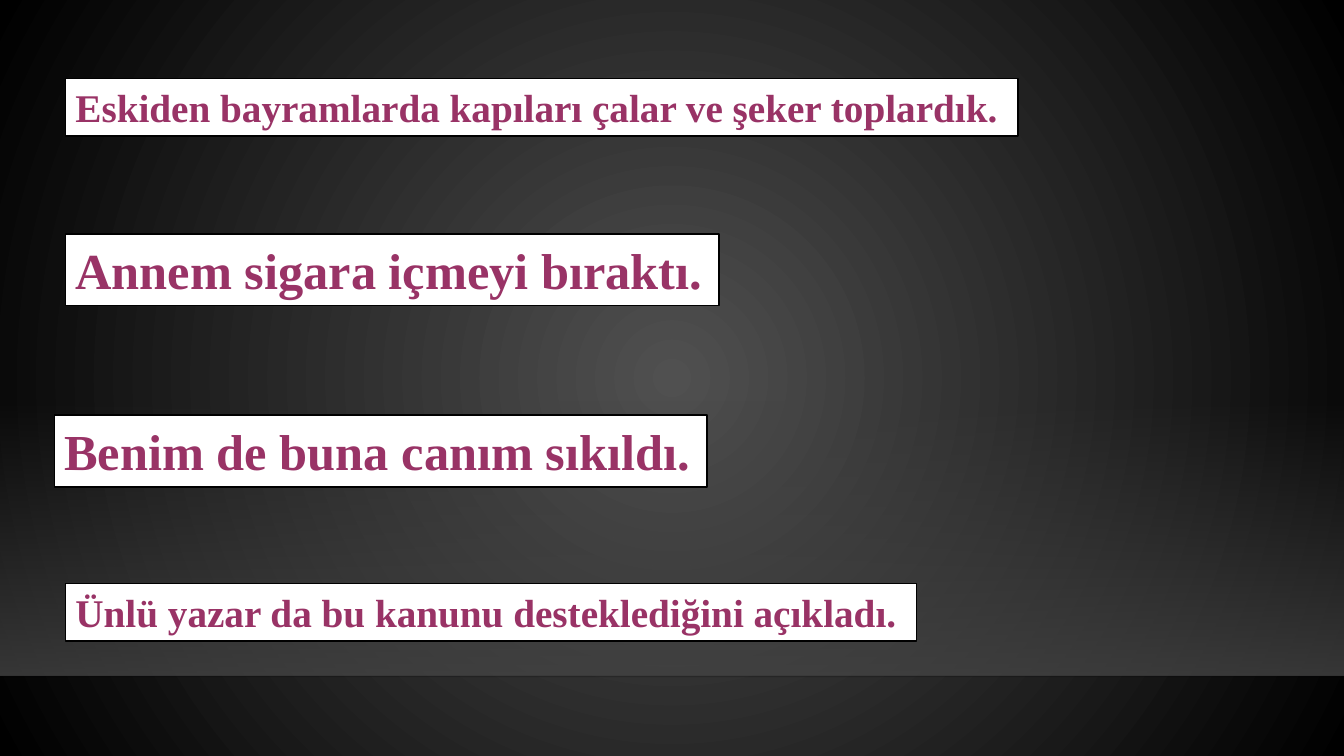
from pptx import Presentation, util as u
from pptx.dml import color
from pptx.enum import shapes, text
from pptx.oxml import parse_xml
from pptx.oxml.ns import nsdecls, qn

HUES = {"glow": "505050", "dark": "000000", "floor": "454545",
        "edge": "000001", "paper": "FFFFFF", "plum": "993366"}
FONT = {"name": "Times New Roman", "bold": True}
FRAME = {"word_wrap": False, "auto_size": text.MSO_AUTO_SIZE.SHAPE_TO_FIT_TEXT,
         "vertical_anchor": text.MSO_ANCHOR.TOP}
RADIAL = ('<a:path path="circle"><a:fillToRect l="50000" t="50000" '
          'r="50000" b="50000"/></a:path>')
DOWN = '<a:lin ang="5400000" scaled="0"/>'

# Sentence, left, top, width, height, text size
LINES = [
    ("Eskiden bayramlarda kapıları çalar ve şeker toplardık.", 0.65, 0.78, 9.45, 0.57, 28),
    ("Annem sigara içmeyi bıraktı.", 0.65, 2.32, 6.48, 0.71, 36),
    ("Benim de buna canım sıkıldı.", 0.54, 4.12, 6.47, 0.71, 36),
    ("Ünlü yazar da bu kanunu desteklediğini açıkladı.", 0.65, 5.79, 8.44, 0.57, 28),
]


def rgb(hue):
    return color.RGBColor.from_string(HUES[hue])


def apply(item, values):
    for key, value in values.items():
        setattr(item, key, value)


def blend(owner, fill, stops, shade):
    """Give fill a gradient of (place, hue, opacity) stops, in percent."""
    fill.gradient()
    marks = "".join(
        f'<a:gs pos="{place * 1000}"><a:srgbClr val="{HUES[hue]}">'
        f'<a:alpha val="{alpha * 1000}"/></a:srgbClr></a:gs>'
        for place, hue, alpha in stops)
    old = owner.element.find(".//" + qn("a:gradFill"))
    new = parse_xml(f'<a:gradFill {nsdecls("a")} rotWithShape="1">'
                    f'<a:gsLst>{marks}</a:gsLst>{shade}</a:gradFill>')
    old.getparent().replace(old, new)


def add_box(slide, left, top, width, height):
    box = slide.shapes.add_shape(
        shapes.MSO_SHAPE.RECTANGLE, *map(u.Inches, (left, top, width, height)))
    box.shadow.inherit = False
    return box


def add_floor(slide):
    band = add_box(slide, 0, 3.96, 13.33, 2.74)
    band.line.fill.background()
    blend(band, band.fill, [(0, "floor", 0), (100, "floor", 80)], DOWN)


def add_edge(slide):
    edge = slide.shapes.add_connector(
        shapes.MSO_CONNECTOR.STRAIGHT, *map(u.Inches, (0, 6.71, 13.33, 6.71)))
    edge.line.width = u.Pt(1)
    edge.line.color.rgb = rgb("edge")
    props = edge.element.spPr
    props.find(".//" + qn("a:srgbClr")).append(
        parse_xml(f'<a:alpha {nsdecls("a")} val="20000"/>'))
    props.append(parse_xml(f'<a:effectLst {nsdecls("a")}/>'))


def add_card(slide, words, left, top, width, height, size):
    card = add_box(slide, left, top, width, height)
    card.fill.solid()
    card.fill.fore_color.rgb = rgb("paper")
    card.line.color.rgb = rgb("dark")
    card.line.width = u.Pt(1.25)
    apply(card.text_frame, FRAME)
    para = card.text_frame.paragraphs[0]
    para.alignment = text.PP_ALIGN.LEFT
    run = para.add_run()
    run.text = words
    apply(run.font, {**FONT, "size": u.Pt(size)})
    run.font.color.rgb = rgb("plum")


def main():
    deck = Presentation()
    apply(deck, {"slide_width": u.Inches(13.33), "slide_height": u.Inches(7.5)})
    slide = deck.slides.add_slide(deck.slide_layouts[6])

    # Backdrop
    blend(slide, slide.background.fill,
          [(0, "glow", 100), (100, "dark", 100)], RADIAL)
    add_floor(slide)
    add_edge(slide)

    # Sentences
    for line in LINES:
        add_card(slide, *line)

    deck.save("out.pptx")


if __name__ == "__main__":
    main()
